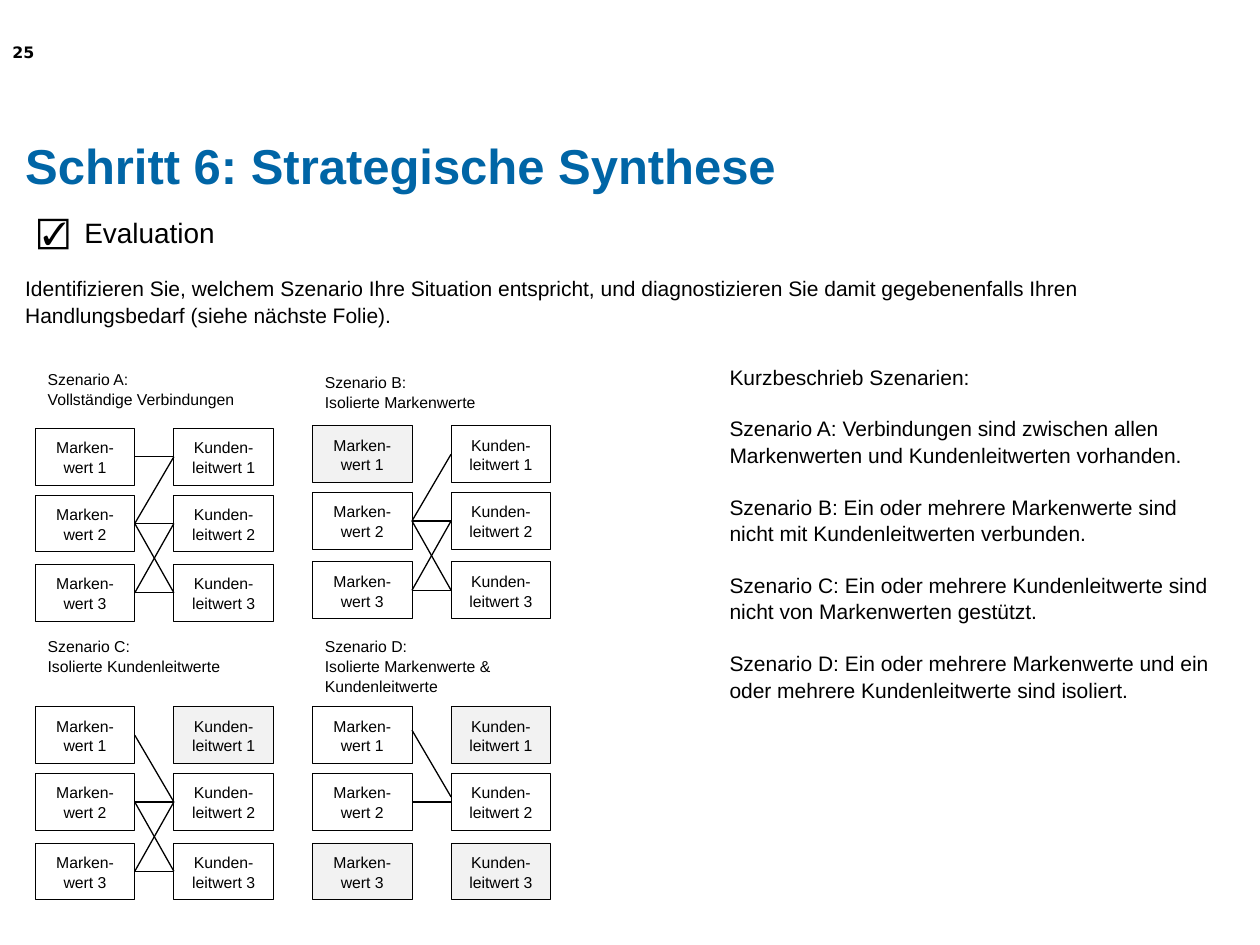
from lxml.etree import SubElement
from pptx import Presentation
from pptx.dml.color import RGBColor
from pptx.enum.shapes import MSO_CONNECTOR, MSO_SHAPE
from pptx.enum.text import MSO_ANCHOR, MSO_AUTO_SIZE, PP_ALIGN
from pptx.oxml.ns import qn
from pptx.util import Inches, Pt

COLORS = {"title": "0065A6", "ink": "000000", "linked": "FFFFFF", "isolated": "F2F2F2"}

TITLE = "Schritt 6: Strategische Synthese"
TASK = ("Identifizieren Sie, welchem Szenario Ihre Situation entspricht, und "
        "diagnostizieren Sie damit gegebenenfalls Ihren Handlungsbedarf (siehe nächste Folie).")
SUMMARY = [
    "Kurzbeschrieb Szenarien:",
    "Szenario A: Verbindungen sind zwischen allen Markenwerten und Kundenleitwerten vorhanden.",
    "Szenario B: Ein oder mehrere Markenwerte sind nicht mit Kundenleitwerten verbunden.",
    "Szenario C: Ein oder mehrere Kundenleitwerte sind nicht von Markenwerten gestützt.",
    "Szenario D: Ein oder mehrere Markenwerte und ein oder mehrere Kundenleitwerte sind isoliert.",
]
VALUE_KINDS = ["Marken-wert", "Kunden-leitwert"]

# Links: brand value, customer value, optional vertical shift in inches.
SCENARIOS = [
    {"caption": ["Szenario A:", "Vollständige Verbindungen"],
     "left": 0.28, "caption_top": 2.88, "top": 3.4, "isolated": [],
     "links": [(1, 1), (2, 1), (2, 2), (3, 2), (3, 3), (2, 3)]},
    {"caption": ["Szenario B:", "Isolierte Markenwerte"],
     "left": 2.48, "caption_top": 2.9, "top": 3.38, "isolated": ["Marken-wert 1"],
     "links": [(2, 1), (2, 2), (3, 2), (3, 3), (2, 3)]},
    {"caption": ["Szenario C:", "Isolierte Kundenleitwerte"],
     "left": 0.28, "caption_top": 5, "top": 5.61, "isolated": ["Kunden-leitwert 1"],
     "links": [(2, 2), (3, 2), (3, 3), (2, 3), (1, 2)]},
    {"caption": ["Szenario D:", "Isolierte Markenwerte &", "Kundenleitwerte"],
     "left": 2.48, "caption_top": 5, "top": 5.61,
     "isolated": ["Marken-wert 3", "Kunden-leitwert 1", "Kunden-leitwert 3"],
     "links": [(1, 2, -0.04), (2, 2)]},
]
BOX_W, BOX_H, COLUMN_STEP = 0.79, 0.45, 1.1
ROW_OFFSETS = [0, 0.53, 1.08]


def rgb(name):
    return RGBColor.from_string(COLORS[name])


def write(shape, paragraphs, size, font="Arial", color="ink", bold=False, align=PP_ALIGN.LEFT,
          anchor=MSO_ANCHOR.TOP, inset=True, wrap=True, gap=0):
    """Fill a shape with formatted paragraphs; gap is the space between them in points."""
    frame = shape.text_frame
    frame.auto_size = MSO_AUTO_SIZE.NONE
    frame.word_wrap = wrap
    frame.vertical_anchor = anchor
    if not inset:
        frame.margin_left = frame.margin_right = frame.margin_top = frame.margin_bottom = 0
    for index, text in enumerate(paragraphs):
        paragraph = frame.paragraphs[0] if index == 0 else frame.add_paragraph()
        paragraph.alignment = align
        paragraph.line_spacing = 1.05
        paragraph.space_before = Pt(gap if index else 0)
        run = paragraph.add_run()
        run.text = text
        run.font.name, run.font.size, run.font.bold = font, Pt(size), bold
        run.font.color.rgb = rgb(color)


def place(shape, left, top, width, height):
    shape.left, shape.top = Inches(left), Inches(top)
    shape.width, shape.height = Inches(width), Inches(height)


def add_text(shapes, box, paragraphs, size, **text_format):
    write(shapes.add_textbox(*map(Inches, box)), paragraphs, size, **text_format)


def add_value_box(shapes, left, top, label, fill):
    box = shapes.add_shape(MSO_SHAPE.RECTANGLE, *map(Inches, (left, top, BOX_W, BOX_H)))
    box.shadow.inherit = False
    box.fill.solid()
    box.fill.fore_color.rgb = rgb(fill)
    box.line.color.rgb = rgb("ink")
    box.line.width = Pt(0.5)
    write(box, [label], 9, align=PP_ALIGN.CENTER, anchor=MSO_ANCHOR.MIDDLE)


def add_link(shapes, *ends):
    link = shapes.add_connector(MSO_CONNECTOR.STRAIGHT, *map(Inches, ends))
    link.line.color.rgb = rgb("ink")
    link.line.width = Pt(0.75)
    SubElement(link._element.spPr, qn("a:effectLst"))


def add_scenario(slide, scenario):
    shapes = slide.shapes.add_group_shape().shapes
    left, top = scenario["left"], scenario["top"]
    for column, kind in enumerate(VALUE_KINDS):
        for row, offset in enumerate(ROW_OFFSETS, start=1):
            label = f"{kind} {row}"
            fill = "isolated" if label in scenario["isolated"] else "linked"
            add_value_box(shapes, left + column * COLUMN_STEP, top + offset, label, fill)
    for brand, customer, *shift in scenario["links"]:
        middle = top + BOX_H / 2 + sum(shift)
        add_link(shapes, left + BOX_W, middle + ROW_OFFSETS[brand - 1],
                 left + COLUMN_STEP, middle + ROW_OFFSETS[customer - 1])
    caption = scenario["caption"]
    add_text(shapes, (left, scenario["caption_top"], 1.7, 0.1 + 0.15 * len(caption)),
             caption, 9, wrap=False)


def main():
    deck = Presentation()
    deck.slide_width, deck.slide_height = Inches(10), Inches(7.5)
    slide = deck.slides.add_slide(deck.slide_layouts[1])

    title, task = slide.placeholders
    place(title, 0.2, 1.05, 9.61, 0.57)
    write(title, [TITLE], 28, color="title", bold=True, inset=False)
    place(task, 0.2, 2.18, 9.61, 0.47)
    properties = task.text_frame.paragraphs[0]._p.get_or_add_pPr()
    properties.set("marL", "0")
    properties.set("indent", "0")
    SubElement(properties, qn("a:buNone"))
    write(task, [TASK], 12, inset=False)

    add_text(slide.shapes, (0, 0.28, 0.79, 0.47), ["25"], 9, font="DejaVu Sans", bold=True)
    add_text(slide.shapes, (0.67, 1.7, 1.1, 0.24), ["Evaluation"], 16, inset=False)
    add_text(slide.shapes, (0.2, 1.62, 0.43, 0.4), ["☑"], 18, font="Courier New", wrap=False)
    add_text(slide.shapes, (5.79, 2.88, 3.94, 4.02), SUMMARY, 12, inset=False, gap=14.5)
    for scenario in SCENARIOS:
        add_scenario(slide, scenario)
    deck.save("out.pptx")


if __name__ == "__main__":
    main()
